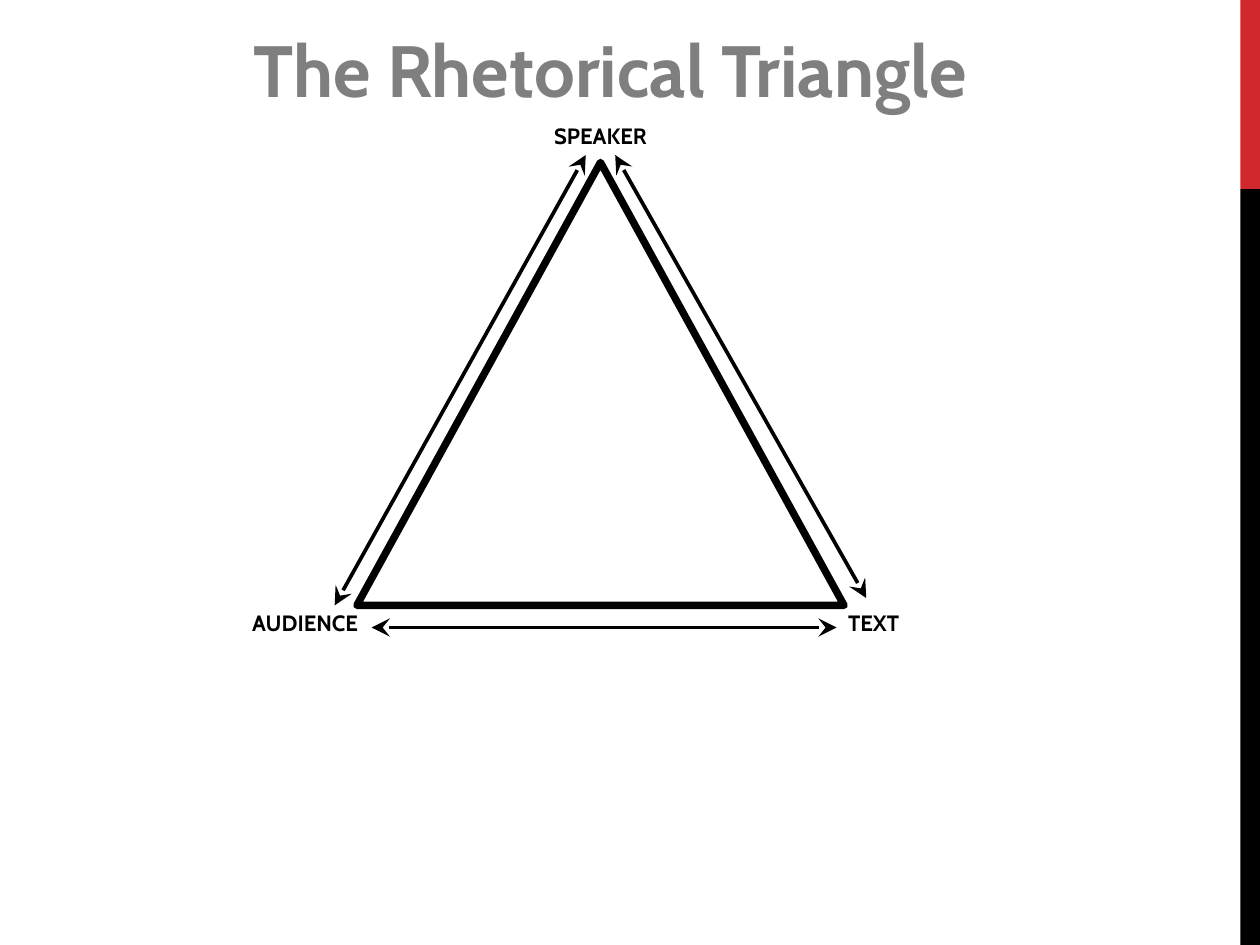
from dataclasses import dataclass

from lxml.etree import SubElement
from pptx import Presentation
from pptx.dml.color import RGBColor
from pptx.enum.shapes import MSO_CONNECTOR, MSO_SHAPE
from pptx.enum.text import MSO_ANCHOR, MSO_AUTO_SIZE, PP_ALIGN
from pptx.oxml.ns import qn
from pptx.slide import Slide
from pptx.util import Inches, Pt

COLS, ROWS = 512, 384
CELL = Inches(1) // 36
ACCENT_SHARE = 0.2


@dataclass(frozen=True)
class Theme:
    font: str = "Cabin"
    black: RGBColor = RGBColor(0x00, 0x00, 0x00)
    grey: RGBColor = RGBColor(0x7F, 0x7F, 0x7F)
    red: RGBColor = RGBColor(0xD1, 0x28, 0x2E)
    title_size: int = 59
    label_size: int = 18
    triangle_line: int = 6
    arrow_line: int = 3


@dataclass(frozen=True)
class Box:
    col: float
    row: float
    cols: float
    rows: float

    def emu(self) -> tuple[int, ...]:
        return tuple(round(v * CELL) for v in (self.col, self.row, self.cols, self.rows))


@dataclass(frozen=True)
class Bar:
    box: Box
    color: RGBColor


@dataclass(frozen=True)
class Label:
    text: str
    col: int
    row: int


@dataclass(frozen=True)
class Arrow:
    start: tuple[int, int]
    end: tuple[int, int]


THEME = Theme()
TITLE_BOX = Box(9, 9, 478, 42)
TRIANGLE_BOX = Box(145, 66, 198, 180)
LABEL_COLS, LABEL_ROWS = 72, 15
BAR_COL = 504
SPLIT = ROWS * ACCENT_SHARE

BARS = [
    Bar(Box(BAR_COL, 0, COLS - BAR_COL, SPLIT), THEME.red),
    Bar(Box(BAR_COL, SPLIT, COLS - BAR_COL, ROWS - SPLIT), THEME.black),
]
LABELS = [
    Label("SPEAKER", 208, 48),
    Label("AUDIENCE", 88, 246),
    Label("TEXT", 319, 246),
]
ARROWS = [
    Arrow((238, 63), (136, 246)),
    Arrow((250, 63), (352, 243)),
    Arrow((151, 255), (340, 255)),
]


def write(sp, text: str, *, size: int, color: RGBColor, inset: tuple[float, float],
          anchor: MSO_ANCHOR = MSO_ANCHOR.TOP, spacing: float = 1.0) -> None:
    tf = sp.text_frame
    tf.word_wrap = True
    tf.auto_size = MSO_AUTO_SIZE.NONE
    tf.vertical_anchor = anchor
    tf.margin_left = tf.margin_right = Inches(inset[0])
    tf.margin_top = tf.margin_bottom = Inches(inset[1])
    p = tf.paragraphs[0]
    p.alignment = PP_ALIGN.CENTER
    p.line_spacing = spacing
    r = p.add_run()
    r.text = text
    r.font.name = THEME.font
    r.font.size = Pt(size)
    r.font.bold = True
    r.font.color.rgb = color


def draw_bar(s: Slide, bar: Bar) -> None:
    sp = s.shapes.add_shape(MSO_SHAPE.RECTANGLE, *bar.box.emu())
    sp.shadow.inherit = False
    sp.fill.solid()
    sp.fill.fore_color.rgb = bar.color
    sp.line.fill.background()


def draw_title(s: Slide, text: str) -> None:
    sp = s.shapes.title
    sp.left, sp.top, sp.width, sp.height = TITLE_BOX.emu()
    write(sp, text, size=THEME.title_size, color=THEME.grey, inset=(0.06, 0.06),
          anchor=MSO_ANCHOR.MIDDLE, spacing=0.9)


def draw_triangle(s: Slide) -> None:
    sp = s.shapes.add_shape(MSO_SHAPE.ISOSCELES_TRIANGLE, *TRIANGLE_BOX.emu())
    sp.shadow.inherit = False
    sp.fill.background()
    sp.line.color.rgb = THEME.black
    sp.line.width = Pt(THEME.triangle_line)
    SubElement(sp.line._get_or_add_ln(), qn("a:round"))


def draw_label(s: Slide, label: Label) -> None:
    box = Box(label.col, label.row, LABEL_COLS, LABEL_ROWS)
    sp = s.shapes.add_textbox(*box.emu())
    write(sp, label.text, size=THEME.label_size, color=THEME.black, inset=(0.1, 0.05))


def draw_arrow(s: Slide, arrow: Arrow) -> None:
    ends = [v * CELL for v in arrow.start + arrow.end]
    sp = s.shapes.add_connector(MSO_CONNECTOR.STRAIGHT, *ends)
    sp.line.color.rgb = THEME.black
    sp.line.width = Pt(THEME.arrow_line)
    ln = sp.line._get_or_add_ln()
    for tag in ("a:headEnd", "a:tailEnd"):
        SubElement(ln, qn(tag), type="stealth", w="lg", len="lg")
    SubElement(sp._element.spPr, qn("a:effectLst"))


def main() -> None:
    prs = Presentation()
    prs.slide_width, prs.slide_height = COLS * CELL, ROWS * CELL
    s = prs.slides.add_slide(prs.slide_layouts[5])
    for bar in BARS:
        draw_bar(s, bar)
    draw_title(s, "The Rhetorical Triangle")
    draw_triangle(s)
    for label in LABELS:
        draw_label(s, label)
    for arrow in ARROWS:
        draw_arrow(s, arrow)
    prs.save("out.pptx")


if __name__ == "__main__":
    main()
